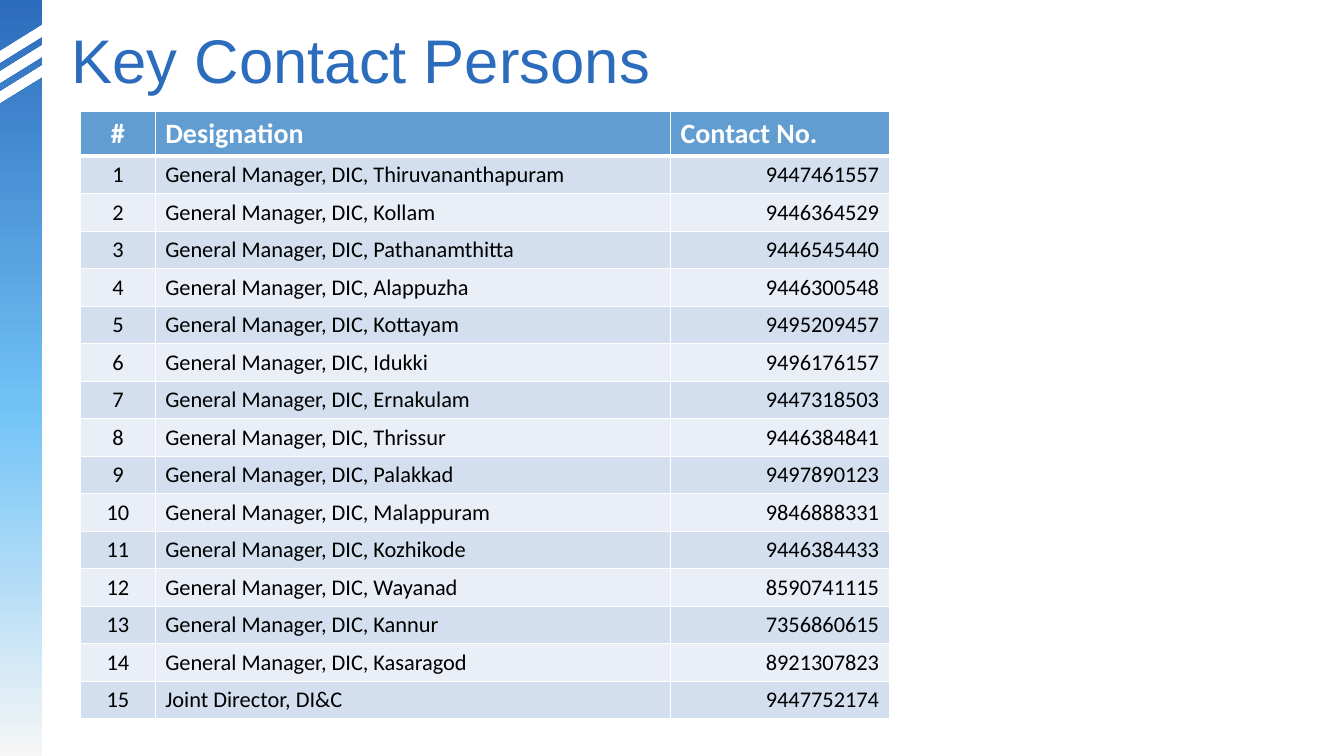
import copy
from dataclasses import dataclass

import pptx
import pptx.dml.color
import pptx.enum.text
import pptx.oxml
import pptx.oxml.ns
import pptx.util

ALIGN = pptx.enum.text.PP_ALIGN
Inches = pptx.util.Inches


@dataclass(frozen=True)
class Theme:
    title_font: str = "Arial"
    table_font: str = "Calibri"
    title_size: int = 44
    header_size: int = 20
    body_size: int = 16
    title: str = "2C6CBC"
    header: str = "629DD1"
    bands: tuple = ("D3DFEE", "EAEFF7")
    light: str = "FFFFFF"
    dark: str = "000000"
    gradient: tuple = ((0, "2C6CBC"), (0.54, "71C3F7"), (1, "F6F6F6"))


THEME = Theme()
SLIDE_WIDTH, SLIDE_HEIGHT = 13.33, 7.5
COLUMN_WIDTHS = (0.74, 5.11, 2.17)
COLUMN_ALIGNMENTS = (ALIGN.CENTER, ALIGN.LEFT, ALIGN.RIGHT)
HEADER_ALIGNMENTS = (ALIGN.CENTER, ALIGN.LEFT, ALIGN.LEFT)
HEADER_HEIGHT, ROW_HEIGHT = 0.44, 0.37
HEADINGS = ("#", "Designation", "Contact No.")
DISTRICT_NUMBERS = {
    "Thiruvananthapuram": "9447461557",
    "Kollam": "9446364529",
    "Pathanamthitta": "9446545440",
    "Alappuzha": "9446300548",
    "Kottayam": "9495209457",
    "Idukki": "9496176157",
    "Ernakulam": "9447318503",
    "Thrissur": "9446384841",
    "Palakkad": "9497890123",
    "Malappuram": "9846888331",
    "Kozhikode": "9446384433",
    "Wayanad": "8590741115",
    "Kannur": "7356860615",
    "Kasaragod": "8921307823",
}
CONTACTS = [(f"General Manager, DIC, {district}", number)
            for district, number in DISTRICT_NUMBERS.items()]
CONTACTS.append(("Joint Director, DI&C", "9447752174"))


def rgb(color):
    return pptx.dml.color.RGBColor.from_string(color)


def format_paragraph(paragraph, font_name, size, color, alignment, bold=False):
    paragraph.alignment = alignment
    font = paragraph.font
    font.name, font.size, font.bold = font_name, pptx.util.Pt(size), bold
    font.color.rgb = rgb(color)


def fill_gradient(shape, stops):
    """Fill from top to bottom with any number of (position, color) stops."""
    shape.fill.gradient()
    shape.fill.gradient_angle = 270
    stop_list = shape._element.spPr.find(".//" + pptx.oxml.ns.qn("a:gsLst"))
    while len(stop_list) < len(stops):
        stop_list.append(copy.deepcopy(stop_list[-1]))
    for stop, (position, color) in zip(shape.fill.gradient_stops, stops):
        stop.position = position
        stop.color.rgb = rgb(color)


def add_side_band(slide, left, top, width, height):
    """Draw the gradient band, cut by three slanted gaps."""
    slant = 0.26
    # Top and bottom of each piece along the band's left edge
    pieces = ((0.63, 0.7), (0.83, 0.9))
    contours = [((0, 0), (width, 0), (width, 0.5 - slant), (0, 0.5))]
    contours += [((0, upper), (width, upper - slant), (width, lower - slant), (0, lower))
                 for upper, lower in pieces]
    contours.append(((0, 1.03), (width, 1.03 - slant), (width, height), (0, height)))

    builder = None
    for contour in contours:
        points = [(Inches(left + x), Inches(top + y)) for x, y in contour]
        if builder is None:
            builder = slide.shapes.build_freeform(*points[0], scale=1.0)
        else:
            builder.move_to(*points[0])
        builder.add_line_segments(points[1:], close=True)
    band = builder.convert_to_shape()
    band.shadow.inherit = False
    band.line.fill.background()
    fill_gradient(band, THEME.gradient)


def place_title(slide, text, left, top, width, height):
    title = slide.shapes.title
    title.left, title.top = Inches(left), Inches(top)
    title.width, title.height = Inches(width), Inches(height)
    frame = title.text_frame
    frame.text = text
    frame.word_wrap = True
    frame.auto_size = pptx.enum.text.MSO_AUTO_SIZE.NONE
    frame.vertical_anchor = pptx.enum.text.MSO_ANCHOR.MIDDLE
    paragraph = frame.paragraphs[0]
    paragraph.line_spacing = 0.9
    format_paragraph(paragraph, THEME.title_font, THEME.title_size, THEME.title, ALIGN.LEFT)


def set_borders(cell, top=1, bottom=1):
    properties = cell._tc.get_or_add_tcPr()
    for side, points in (("L", 1), ("R", 1), ("T", top), ("B", bottom)):
        properties.append(pptx.oxml.parse_xml(
            f'<a:ln{side} {pptx.oxml.ns.nsdecls("a")} w="{pptx.util.Pt(points)}">'
            f'<a:solidFill><a:srgbClr val="{THEME.light}"/></a:solidFill></a:ln{side}>'))


def fill_cell(cell, text, row, column):
    is_header = row == 0
    set_borders(cell, top=3 if row == 1 else 1, bottom=3 if is_header else 1)
    cell.fill.solid()
    cell.fill.fore_color.rgb = rgb(THEME.header if is_header else THEME.bands[(row - 1) % 2])
    cell.text = text
    format_paragraph(
        cell.text_frame.paragraphs[0], THEME.table_font,
        THEME.header_size if is_header else THEME.body_size,
        THEME.light if is_header else THEME.dark,
        (HEADER_ALIGNMENTS if is_header else COLUMN_ALIGNMENTS)[column],
        bold=is_header)


def add_contact_table(slide, left, top):
    rows = [HEADINGS] + [(str(number), *contact) for number, contact in enumerate(CONTACTS, 1)]
    height = HEADER_HEIGHT + ROW_HEIGHT * len(CONTACTS)
    table = slide.shapes.add_table(
        len(rows), len(HEADINGS), Inches(left), Inches(top),
        Inches(sum(COLUMN_WIDTHS)), Inches(height)).table
    for column, width in zip(table.columns, COLUMN_WIDTHS):
        column.width = Inches(width)
    for row_index, texts in enumerate(rows):
        table.rows[row_index].height = Inches(ROW_HEIGHT if row_index else HEADER_HEIGHT)
        for column_index, text in enumerate(texts):
            fill_cell(table.cell(row_index, column_index), text, row_index, column_index)


def build_contact_slide(presentation):
    slide = presentation.slides.add_slide(presentation.slide_layouts[5])
    add_side_band(slide, 0, 0, 0.42, SLIDE_HEIGHT)
    place_title(slide, "Key Contact Persons", 0.61, 0.15, 12.21, 0.96)
    add_contact_table(slide, 0.8, 1.11)


def main():
    presentation = pptx.Presentation()
    presentation.slide_width = Inches(SLIDE_WIDTH)
    presentation.slide_height = Inches(SLIDE_HEIGHT)
    build_contact_slide(presentation)
    presentation.save("out.pptx")


if __name__ == "__main__":
    main()
